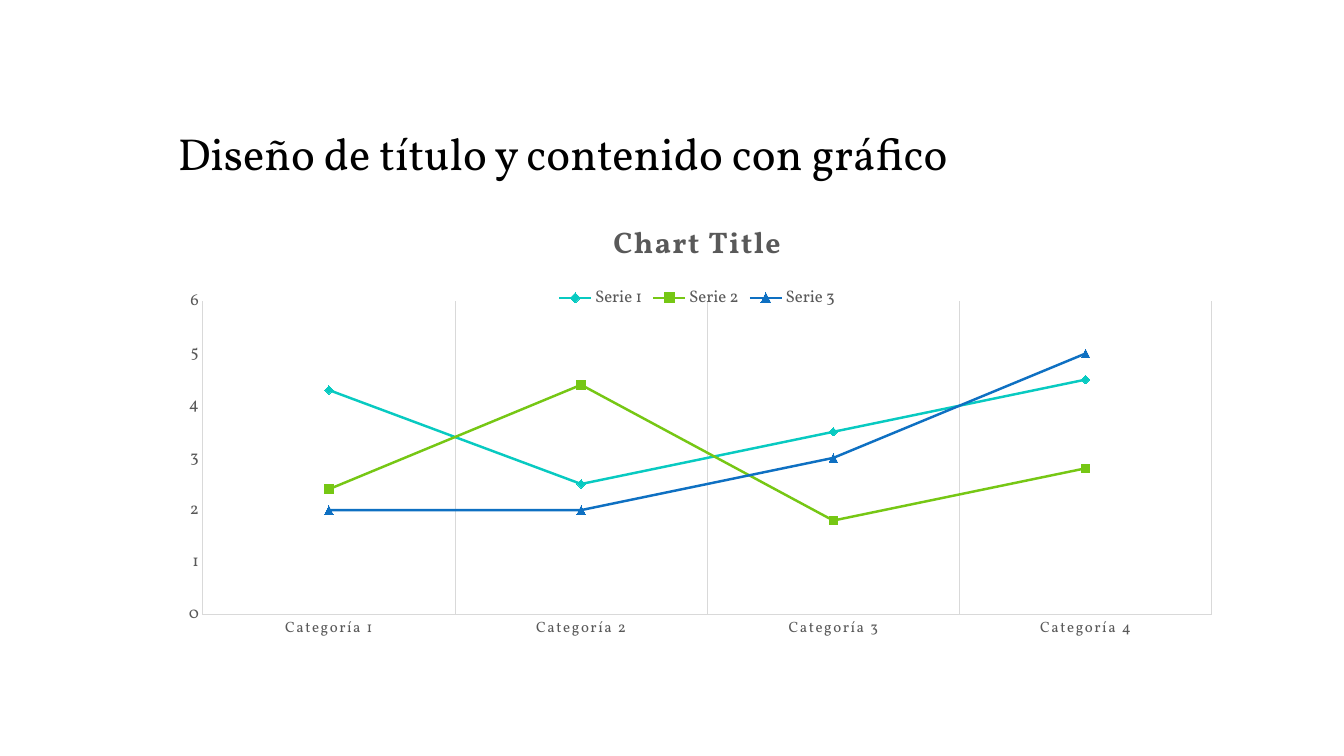
from lxml import etree
from pptx import Presentation
from pptx.chart.data import CategoryChartData
from pptx.dml.color import RGBColor
from pptx.enum.chart import XL_CHART_TYPE, XL_LEGEND_POSITION, XL_MARKER_STYLE, XL_TICK_MARK
from pptx.enum.text import MSO_ANCHOR
from pptx.oxml.ns import qn
from pptx.util import Inches, Pt

FONT = "Vollkorn"
GRAY, RULE = "595959", "D9D9D9"
HEADING = "Diseño de título y contenido con gráfico"
CHART_TITLE = "Chart Title"
CATEGORIES = ["Categoría 1", "Categoría 2", "Categoría 3", "Categoría 4"]
SERIES = [
    ("Serie 1", (4.3, 2.5, 3.5, 4.5), "08CAC1", XL_MARKER_STYLE.DIAMOND),
    ("Serie 2", (2.4, 4.4, 1.8, 2.8), "76C714", XL_MARKER_STYLE.SQUARE),
    ("Serie 3", (2, 2, 3, 5), "0E70C2", XL_MARKER_STYLE.TRIANGLE),
]
PLOT_LAYOUT = [
    ("layoutTarget", "inner"), ("xMode", "edge"), ("yMode", "edge"),
    ("x", 0.033), ("y", 0.216), ("w", 0.953), ("h", 0.678),
]
SLIDE_WIDTH, SLIDE_HEIGHT = 13.33, 7.5
LEFT, WIDTH = Inches((SLIDE_WIDTH - 10) / 2), Inches(10.5)
HEADING_TOP, HEADING_HEIGHT = Inches(7 / 12), Inches(1.25)
CHART_TOP, CHART_HEIGHT = Inches(2), Inches(4 + 7 / 12)


def color(value):
    return RGBColor.from_string(value)


def style_font(font, size, value, bold=False):
    font.name = FONT
    font.size = Pt(size)
    font.bold = bold
    font.color.rgb = color(value)


def style_line(line, value, width):
    line.color.rgb = color(value)
    line.width = Pt(width)


def set_spacing(paragraph_properties, hundredths):
    paragraph_properties.find(qn("a:defRPr")).set("spc", str(hundredths))


def add_heading(slide):
    box = slide.shapes.add_textbox(LEFT, HEADING_TOP, WIDTH, HEADING_HEIGHT)
    frame = box.text_frame
    frame.word_wrap = True
    frame.vertical_anchor = MSO_ANCHOR.BOTTOM
    paragraph = frame.paragraphs[0]
    paragraph.text = HEADING
    paragraph.line_spacing = 0.9
    style_font(paragraph.font, 32, "000000")


def style_axis(axis, size):
    axis.major_tick_mark = axis.minor_tick_mark = XL_TICK_MARK.NONE
    style_font(axis.tick_labels.font, size, GRAY)
    style_line(axis.format.line, RULE, 0.75)


def place_plot(chart):
    plot_area = chart._chartSpace.chart.plotArea
    for old_layout in plot_area.findall(qn("c:layout")):
        plot_area.remove(old_layout)
    layout = etree.Element(qn("c:layout"))
    manual = etree.SubElement(layout, qn("c:manualLayout"))
    for tag, value in PLOT_LAYOUT:
        etree.SubElement(manual, qn(f"c:{tag}")).set("val", str(value))
    plot_area.insert(0, layout)


def add_line_chart(slide):
    data = CategoryChartData()
    data.categories = CATEGORIES
    for name, values, _, _ in SERIES:
        data.add_series(name, values)
    chart = slide.shapes.add_chart(
        XL_CHART_TYPE.LINE_MARKERS, LEFT, CHART_TOP, WIDTH, CHART_HEIGHT, data
    ).chart
    style_font(chart.font, 10, "000000")

    title = chart.chart_title
    title.text_frame.text = CHART_TITLE
    title_paragraph = title.text_frame.paragraphs[0]
    style_font(title_paragraph.font, 21.28, GRAY, bold=True)
    set_spacing(title_paragraph._p.pPr, 120)

    chart.has_legend = True
    chart.legend.position = XL_LEGEND_POSITION.TOP
    chart.legend.include_in_layout = False
    style_font(chart.legend.font, 12, GRAY)

    category_axis, value_axis = chart.category_axis, chart.value_axis
    style_axis(category_axis, 10.64)
    style_axis(value_axis, 12)
    category_axis.has_major_gridlines = True
    style_line(category_axis.major_gridlines.format.line, RULE, 0.75)
    label_properties = category_axis._element.find(f".//{qn('c:txPr')}//{qn('a:pPr')}")
    set_spacing(label_properties, 120)
    value_axis.has_major_gridlines = False
    value_axis.minimum_scale, value_axis.maximum_scale = 0, 6
    value_axis.major_unit = 1

    plot = chart.plots[0]
    plot.vary_by_categories = False
    for series, (_, _, value, marker_style) in zip(plot.series, SERIES):
        series.smooth = False
        style_line(series.format.line, value, 1.75)
        marker = series.marker
        marker.style = marker_style
        marker.size = 6
        marker.format.fill.solid()
        marker.format.fill.fore_color.rgb = color(value)
        style_line(marker.format.line, value, 0.75)
    place_plot(chart)


def main():
    presentation = Presentation()
    presentation.slide_width = Inches(SLIDE_WIDTH)
    presentation.slide_height = Inches(SLIDE_HEIGHT)
    slide = presentation.slides.add_slide(presentation.slide_layouts[6])
    add_heading(slide)
    add_line_chart(slide)
    presentation.save("out.pptx")


if __name__ == "__main__":
    main()
